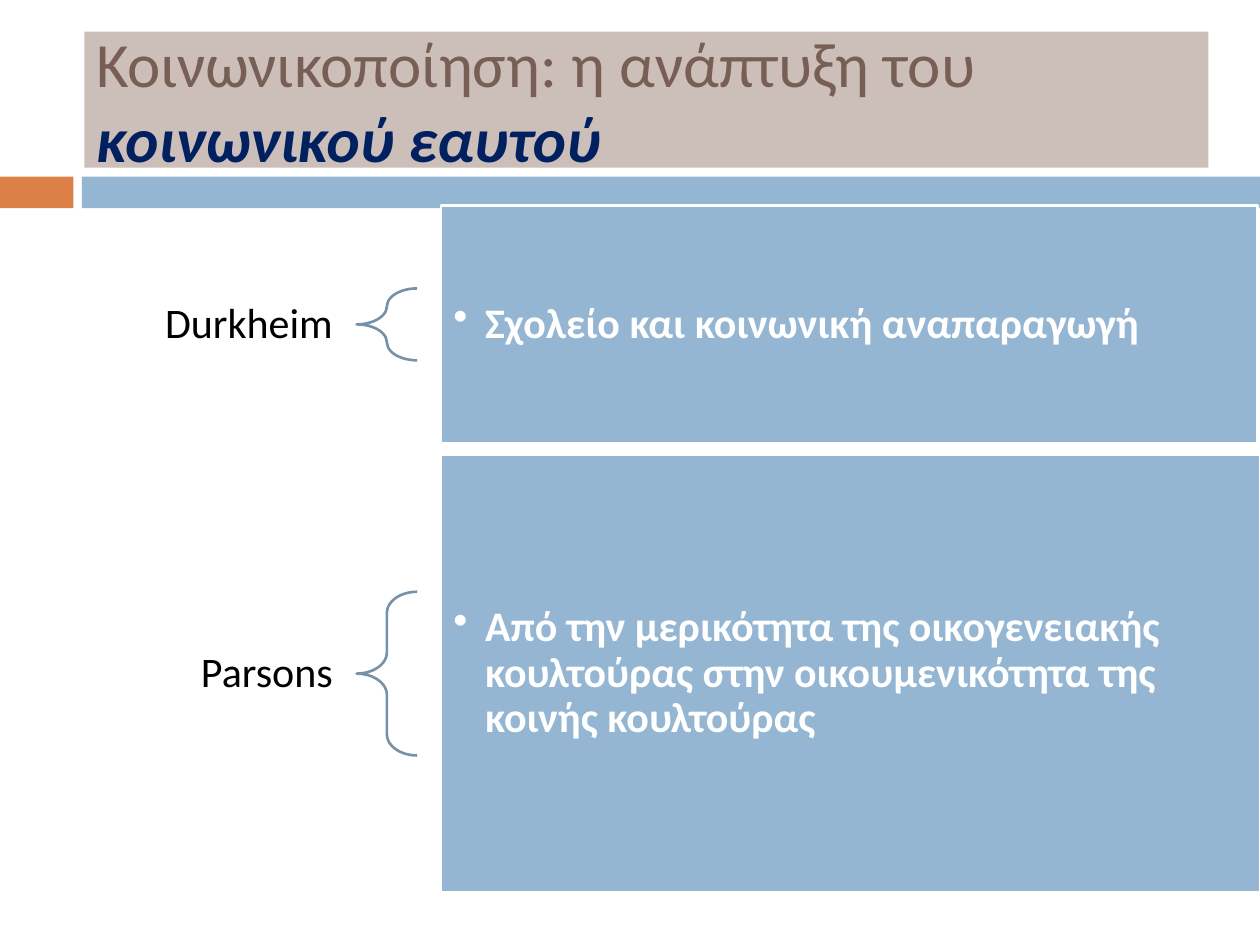
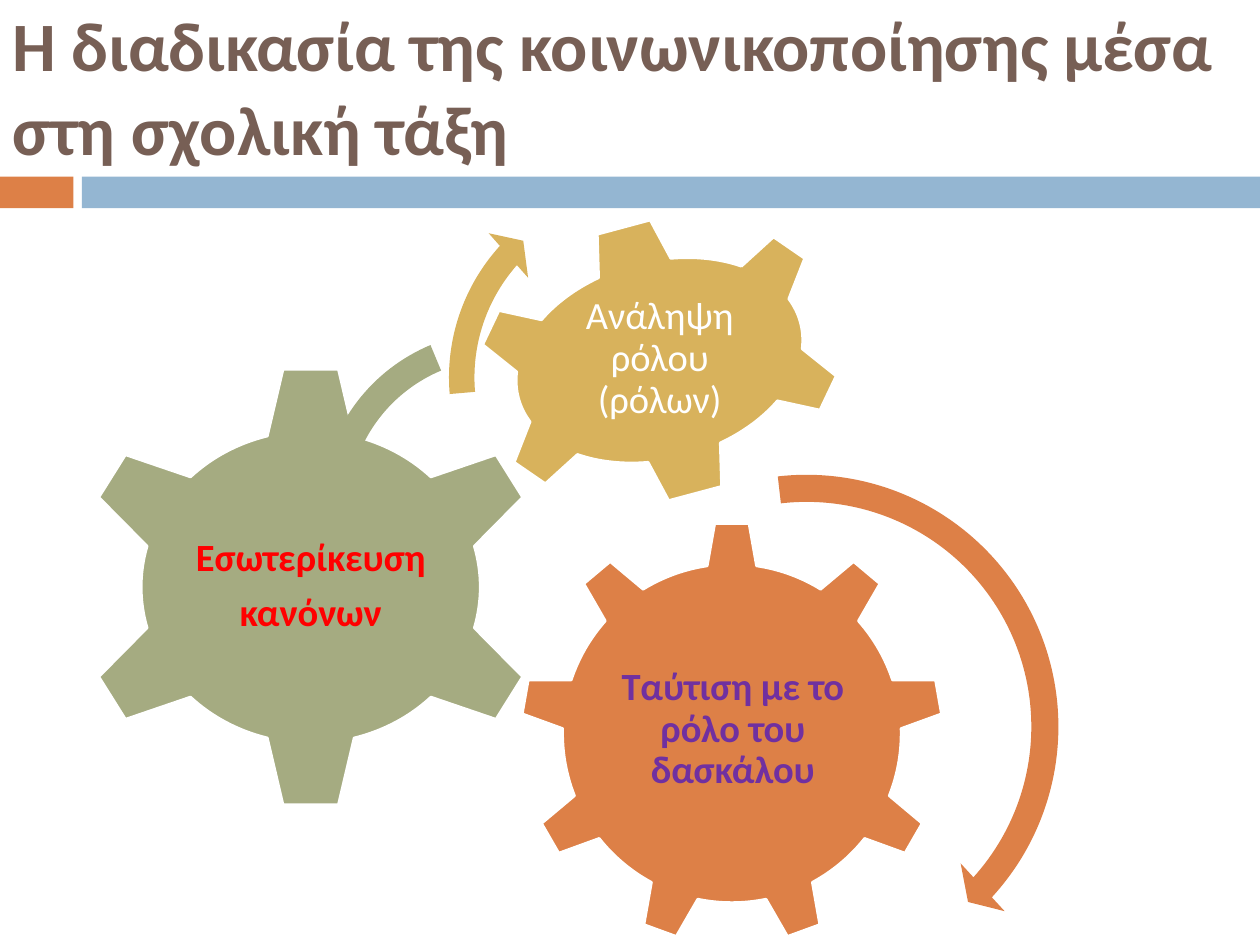
"""Build two slides on socialisation at school: two theorists and three interlocking gears."""
from dataclasses import dataclass
from typing import Optional

import lxml.etree
import pptx
import pptx.dml.color
import pptx.enum.shapes
import pptx.enum.text
import pptx.oxml.ns
import pptx.presentation
import pptx.shapes.autoshape
import pptx.slide
import pptx.util

Cm = pptx.util.Cm
Pt = pptx.util.Pt
Preset = pptx.enum.shapes.MSO_SHAPE
Align = pptx.enum.text.PP_ALIGN


@dataclass(frozen=True)
class Theme:
    """Colours and type sizes of the deck."""
    font: str = "Calibri"
    white: str = "FFFFFF"
    black: str = "000000"
    orange: str = "DD8047"
    blue: str = "94B6D2"
    green: str = "A5AB81"
    gold: str = "D8B25C"
    brown: str = "775F55"
    beige: str = "CCBEB8"
    navy: str = "002060"
    slate: str = "7792A8"
    red: str = "FF0000"
    purple: str = "7030A0"
    outline: float = 1.5
    title: float = 36
    large_title: float = 39.6
    body: float = 24
    gear: float = 22


THEME = Theme()


@dataclass(frozen=True)
class Box:
    """A rectangle in centimetres."""
    left: float
    top: float
    width: float
    height: float

    def emu(self) -> tuple[int, int, int, int]:
        """Return left, top, width and height as lengths."""
        return Cm(self.left), Cm(self.top), Cm(self.width), Cm(self.height)


@dataclass(frozen=True)
class Words:
    """A run of text and its look."""
    text: str
    size: float
    color: str
    bold: bool = False
    italic: bool = False


@dataclass(frozen=True)
class Layout:
    """Paragraph and frame settings of a text."""
    align: pptx.enum.text.PP_ALIGN = Align.LEFT
    inset_x: float = 0.25
    inset_y: float = 0.13
    line_spacing: float = 1.0
    after: float = 0
    bullet_indent: float = 0


@dataclass(frozen=True)
class Theorist:
    """A name braced to its idea, all centred on one horizontal axis."""
    name: str
    idea: str
    axis: float
    brace_height: float
    panel_width: float
    panel_height: float


@dataclass(frozen=True)
class Gear:
    """A cogwheel with a caption."""
    preset: pptx.enum.shapes.MSO_SHAPE
    box: Box
    color: str
    caption_box: Box
    caption: tuple[str, ...]
    caption_color: str
    bold: bool = True
    rotation: float = 0


@dataclass(frozen=True)
class Turn:
    """A curved arrow showing how a gear turns."""
    preset: pptx.enum.shapes.MSO_SHAPE
    box: Box
    color: str
    adjustments: tuple[float, ...]


TITLE_LAYOUT = Layout()
NAME_LAYOUT = Layout(Align.RIGHT, 0.48, 0.18, 0.9, 0.35)
IDEA_LAYOUT = Layout(Align.LEFT, 0.25, 0.25, 0.9, 0.15, 0.64)
GEAR_LAYOUT = Layout(Align.CENTER, 0.08, 0.08, 0.9, 0.35)

BANDS = (
    (Box(0, 3.56, 1.48, 0.64), THEME.orange),
    (Box(1.65, 3.56, 23.75, 0.64), THEME.blue),
)

THEORISTS = (
    Theorist("Durkheim", "Σχολείο και κοινωνική αναπαραγωγή",
             6.54, 1.45, 16.46, 4.8),
    Theorist("Parsons", "Από την μερικότητα της οικογενειακής κουλτούρας "
             "στην οικουμενικότητα της κοινής κουλτούρας",
             13.58, 3.3, 16.51, 8.81),
)

GEARS = (
    Gear(Preset.GEAR_9, Box(10.49, 10.52, 8.53, 8.53), THEME.orange,
         Box(12.22, 12.52, 5.11, 4.39), ("Ταύτιση με το ρόλο του δασκάλου",),
         THEME.purple),
    Gear(Preset.GEAR_6, Box(1.5, 7.34, 9.53, 8.99), THEME.green,
         Box(3.84, 9.6, 4.85, 4.45), ("Εσωτερίκευση", "κανόνων"), THEME.red),
    Gear(Preset.GEAR_6, Box(9.5, 4.42, 7.59, 5.69), THEME.gold,
         Box(11.28, 5.54, 4.04, 3.4), ("Ανάληψη ρόλου (ρόλων)",),
         THEME.white, bold=False, rotation=345),
)

TURNS = (
    Turn(Preset.CIRCULAR_ARROW, Box(10.8, 9.19, 10.92, 10.92), THEME.orange,
         (0.05, 2.99, 25.42, 158.07, 0.06)),
    Turn(Preset.LEFT_CIRCULAR_ARROW, Box(6.1, 6.32, 7.95, 7.95), THEME.green,
         (0.07, 4.3, 104.89, 148.38, 0.08)),
    Turn(Preset.CIRCULAR_ARROW, Box(8.71, 3.33, 8.56, 8.56), THEME.gold,
         (0.06, 3.94, 133.14, 105.08, 0.07)),
)


def rgb(color: str) -> pptx.dml.color.RGBColor:
    """Turn a hex string into a colour."""
    return pptx.dml.color.RGBColor.from_string(color)


def draw_shape(slide: pptx.slide.Slide, preset: pptx.enum.shapes.MSO_SHAPE, box: Box,
               fill: Optional[str] = None, line: Optional[str] = None,
               adjustments: tuple[float, ...] = ()) -> pptx.shapes.autoshape.Shape:
    """Add a flat preset shape."""
    shape = slide.shapes.add_shape(preset, *box.emu())
    shape.shadow.inherit = False
    if fill:
        shape.fill.solid()
        shape.fill.fore_color.rgb = rgb(fill)
    else:
        shape.fill.background()
    if line:
        shape.line.color.rgb = rgb(line)
        shape.line.width = Pt(THEME.outline)
    else:
        shape.line.fill.background()
    for index, value in enumerate(adjustments):
        shape.adjustments[index] = value
    return shape


def write(shape: pptx.shapes.autoshape.Shape, paragraphs: list[list[Words]],
          layout: Layout) -> None:
    """Fill a shape with paragraphs, run by run."""
    frame = shape.text_frame
    frame.word_wrap = True
    frame.vertical_anchor = pptx.enum.text.MSO_ANCHOR.MIDDLE
    frame.margin_left = frame.margin_right = Cm(layout.inset_x)
    frame.margin_top = frame.margin_bottom = Cm(layout.inset_y)
    for index, runs in enumerate(paragraphs):
        paragraph = frame.add_paragraph() if index else frame.paragraphs[0]
        paragraph.alignment = layout.align
        paragraph.line_spacing = layout.line_spacing
        paragraph.space_after = Pt(layout.after * runs[0].size)
        if layout.bullet_indent:
            properties = paragraph._p.get_or_add_pPr()
            properties.set("marL", str(Cm(layout.bullet_indent)))
            properties.set("indent", str(-Cm(layout.bullet_indent)))
            bullet = lxml.etree.SubElement(properties, pptx.oxml.ns.qn("a:buChar"))
            bullet.set("char", "•")
        for words in runs:
            run = paragraph.add_run()
            run.text = words.text
            run.font.name = THEME.font
            run.font.size = Pt(words.size)
            run.font.bold = words.bold
            run.font.italic = words.italic
            run.font.color.rgb = rgb(words.color)


def draw_text(slide: pptx.slide.Slide, box: Box, paragraphs: list[list[Words]],
              layout: Layout) -> pptx.shapes.autoshape.Shape:
    """Add a text box."""
    text_box = slide.shapes.add_textbox(*box.emu())
    write(text_box, paragraphs, layout)
    return text_box


def start_slide(deck: pptx.presentation.Presentation, title_box: Box, title: list[Words],
                title_fill: Optional[str] = None) -> pptx.slide.Slide:
    """Add a blank slide with the bands and a title."""
    slide = deck.slides.add_slide(deck.slide_layouts[6])
    for box, color in BANDS:
        draw_shape(slide, Preset.RECTANGLE, box, color)
    heading = draw_text(slide, title_box, [title], TITLE_LAYOUT)
    if title_fill:
        heading.fill.solid()
        heading.fill.fore_color.rgb = rgb(title_fill)
    return slide


def draw_theorist(slide: pptx.slide.Slide, theorist: Theorist) -> None:
    """Draw the name, the brace and the idea panel."""
    def centred(left: float, width: float, height: float) -> Box:
        """Centre a box on the axis of the row."""
        return Box(left, theorist.axis - height / 2, width, height)

    draw_text(slide, centred(1.12, 6.07, 1.32),
              [[Words(theorist.name, THEME.body, THEME.black)]], NAME_LAYOUT)
    draw_shape(slide, Preset.LEFT_BRACE, centred(7.19, 1.22, theorist.brace_height),
               line=THEME.slate, adjustments=(0.35, 0.5))
    panel = draw_shape(slide, Preset.RECTANGLE,
                       centred(8.89, theorist.panel_width, theorist.panel_height),
                       THEME.blue, THEME.white)
    write(panel, [[Words(theorist.idea, THEME.body, THEME.white, bold=True)]], IDEA_LAYOUT)


def draw_gear(slide: pptx.slide.Slide, gear: Gear) -> None:
    """Draw a cogwheel and its upright caption."""
    wheel = draw_shape(slide, gear.preset, gear.box, gear.color, THEME.white)
    wheel.rotation = gear.rotation
    caption = [[Words(line, THEME.gear, gear.caption_color, gear.bold)]
               for line in gear.caption]
    draw_text(slide, gear.caption_box, caption, GEAR_LAYOUT)


def main() -> None:
    """Build and save the deck."""
    deck = pptx.Presentation()
    deck.slide_width, deck.slide_height = Cm(25.4), Cm(19.05)

    social_self = start_slide(deck, Box(1.7, 0.64, 22.66, 2.74), [
        Words("Κοινωνικοποίηση: η ανάπτυξη του ", THEME.title, THEME.brown),
        Words("κοινωνικού εαυτού", THEME.title, THEME.navy, bold=True, italic=True),
    ], THEME.beige)
    for theorist in THEORISTS:
        draw_theorist(social_self, theorist)

    classroom = start_slide(deck, Box(0, 0.08, 25.4, 3.3), [
        Words("Η διαδικασία της κοινωνικοποίησης μέσα στη σχολική τάξη",
              THEME.large_title, THEME.brown, bold=True),
    ])
    for gear in GEARS:
        draw_gear(classroom, gear)
    for turn in TURNS:
        draw_shape(classroom, turn.preset, turn.box, turn.color,
                   adjustments=turn.adjustments)

    deck.save("out.pptx")


if __name__ == "__main__":
    main()
